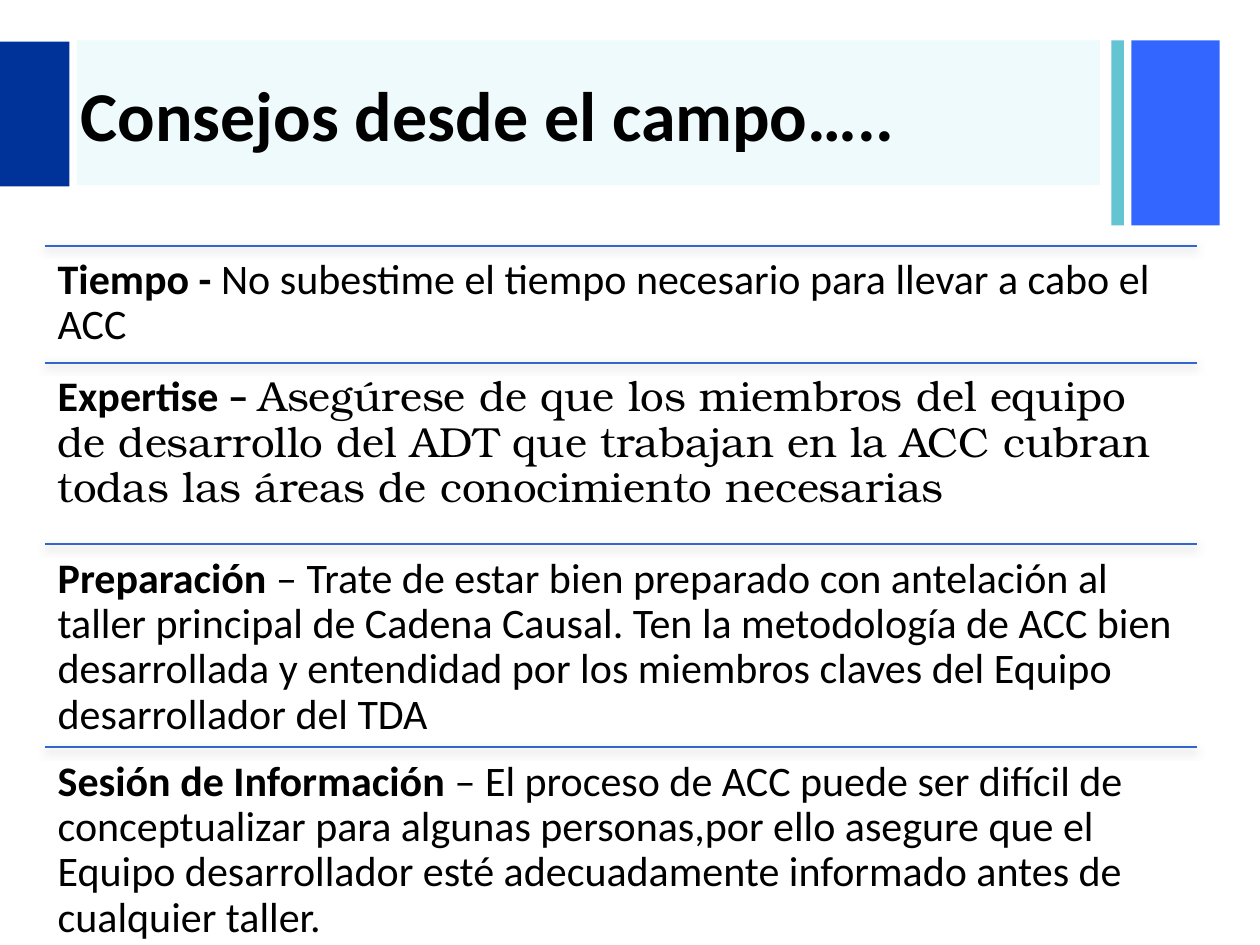
"""Build the slide of field advice on causal chain analysis."""
from dataclasses import dataclass

from lxml.etree import SubElement
from pptx import Presentation
from pptx.dml.color import RGBColor
from pptx.enum.shapes import MSO_CONNECTOR, MSO_SHAPE
from pptx.enum.text import MSO_ANCHOR, PP_ALIGN
from pptx.oxml.ns import qn
from pptx.util import Inches, Pt


@dataclass(frozen=True)
class Theme:
    navy: str = "003399"
    blue: str = "3366FF"
    teal: str = "65C4D2"
    band: str = "14C5D0"
    rule: str = "3366CC"
    shadow: str = "808080"
    text: str = "000000"
    sans: str = "Calibri"
    serif: str = "TeX Gyre Bonum"
    title_size: int = 40
    body_size: int = 24


def style_run(r, size, bold, font):
    r.font.size = Pt(size)
    r.font.bold = bold
    r.font.name = font
    r.font.color.rgb = RGBColor.from_string(theme.text)


def add_shadow(line):
    effects = SubElement(line._element.spPr, qn("a:effectLst"))
    shadow = SubElement(effects, qn("a:outerShdw"), blurRad=str(Pt(5)),
                        dist=str(Pt(2)), dir="5400000", rotWithShape="0")
    color = SubElement(shadow, qn("a:srgbClr"), val=theme.shadow)
    SubElement(color, qn("a:alpha"), val="75000")


theme = Theme()
prs = Presentation()
prs.slide_width, prs.slide_height = Inches(10), Inches(7.5)
s = prs.slides.add_slide(prs.slide_layouts[5])

blocks = [
    (8.98, 0.32, 0.7, 1.47, theme.blue, 100),
    (8.82, 0.32, 0.1, 1.47, theme.teal, 100),
    (0.61, 0.32, 8.12, 1.15, theme.band, 7),
    (0, 0.33, 0.55, 1.15, theme.navy, 100),
]
for x, y, w, h, color, opacity in blocks:
    sp = s.shapes.add_shape(MSO_SHAPE.RECTANGLE, Inches(x), Inches(y), Inches(w), Inches(h))
    sp.shadow.inherit = False
    sp.line.fill.background()
    sp.fill.solid()
    sp.fill.fore_color.rgb = RGBColor.from_string(color)
    if opacity < 100:
        fill = sp._element.spPr.find(qn("a:solidFill"))
        SubElement(fill[0], qn("a:alpha"), val=str(opacity * 1000))

title = s.shapes.title
title.left, title.top = Inches(0.54), Inches(0.34)
title.width, title.height = Inches(8.27), Inches(1.12)
s.shapes._spTree.append(title._element)
tf = title.text_frame
tf.text = "Consejos desde el campo….."
tf.vertical_anchor = MSO_ANCHOR.MIDDLE
tf.paragraphs[0].alignment = PP_ALIGN.LEFT
style_run(tf.paragraphs[0].runs[0], theme.title_size, True, theme.sans)

left, width = 0.36, 9.14
tips = [
    (1.95, "Tiempo - ", "No subestime el tiempo necesario para llevar a cabo el ACC", theme.sans),
    (2.88, "Expertise – ",
     "Asegúrese de que los miembros del equipo de desarrollo del ADT que trabajan "
     "en la ACC cubran todas las áreas de conocimiento necesarias", theme.serif),
    (4.32, "Preparación",
     " – Trate de estar bien preparado con antelación al taller principal de Cadena "
     "Causal. Ten la metodología de ACC bien desarrollada y entendidad por los "
     "miembros claves del Equipo desarrollador del TDA", theme.sans),
    (5.93, "Sesión de Información",
     " – El proceso de ACC puede ser difícil de conceptualizar para algunas "
     "personas,por ello asegure que el Equipo desarrollador esté adecuadamente "
     "informado antes de cualquier taller.", theme.sans),
]
bottoms = [tip[0] for tip in tips[1:]] + [7.41]
for (top, heading, advice, font), bottom in zip(tips, bottoms):
    line = s.shapes.add_connector(MSO_CONNECTOR.STRAIGHT, Inches(left), Inches(top),
                                  Inches(left + width), Inches(top))
    line.line.color.rgb = RGBColor.from_string(theme.rule)
    line.line.width = Pt(1)
    add_shadow(line)

    box = s.shapes.add_textbox(Inches(left), Inches(top), Inches(width), Inches(bottom - top))
    tf = box.text_frame
    tf.word_wrap = True
    tf.margin_left = tf.margin_right = tf.margin_top = tf.margin_bottom = Inches(0.1)
    p = tf.paragraphs[0]
    p.line_spacing = 0.9
    for text, bold, face in ((heading, True, theme.sans), (advice, False, font)):
        r = p.add_run()
        r.text = text
        style_run(r, theme.body_size, bold, face)

prs.save("out.pptx")
